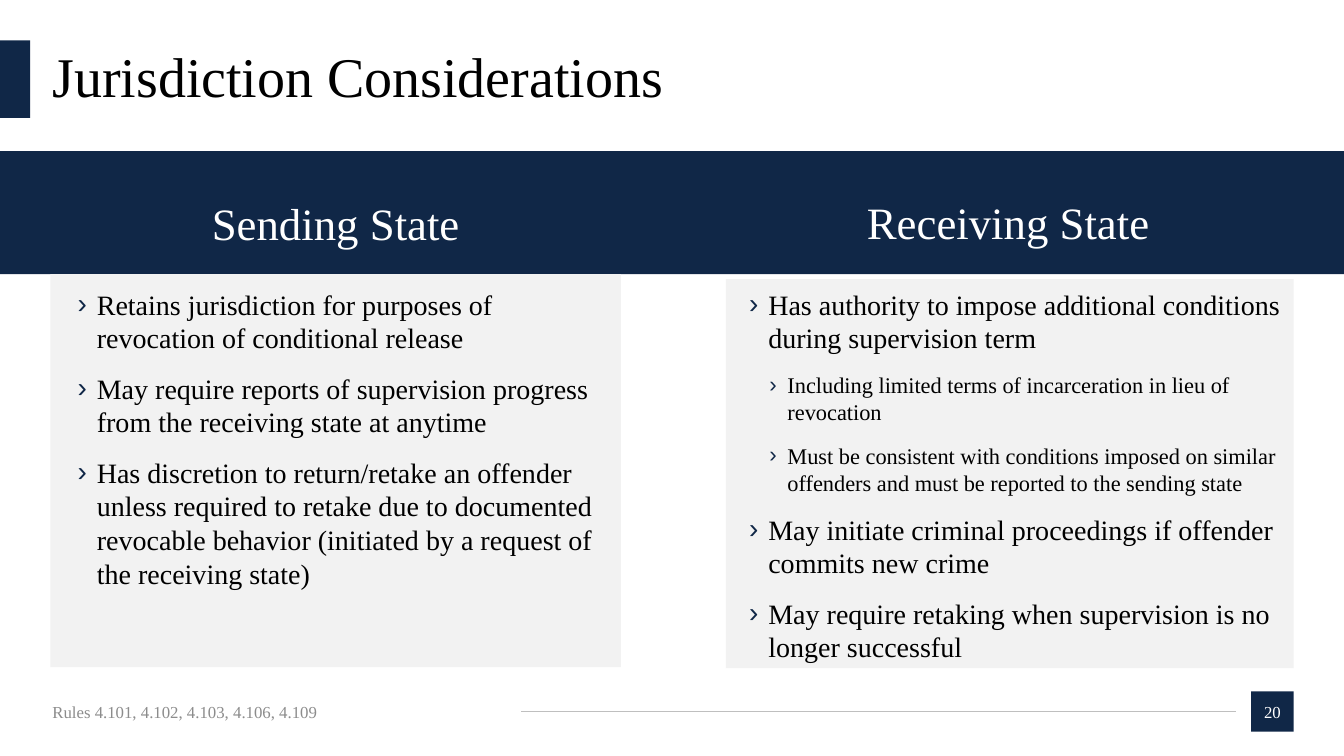
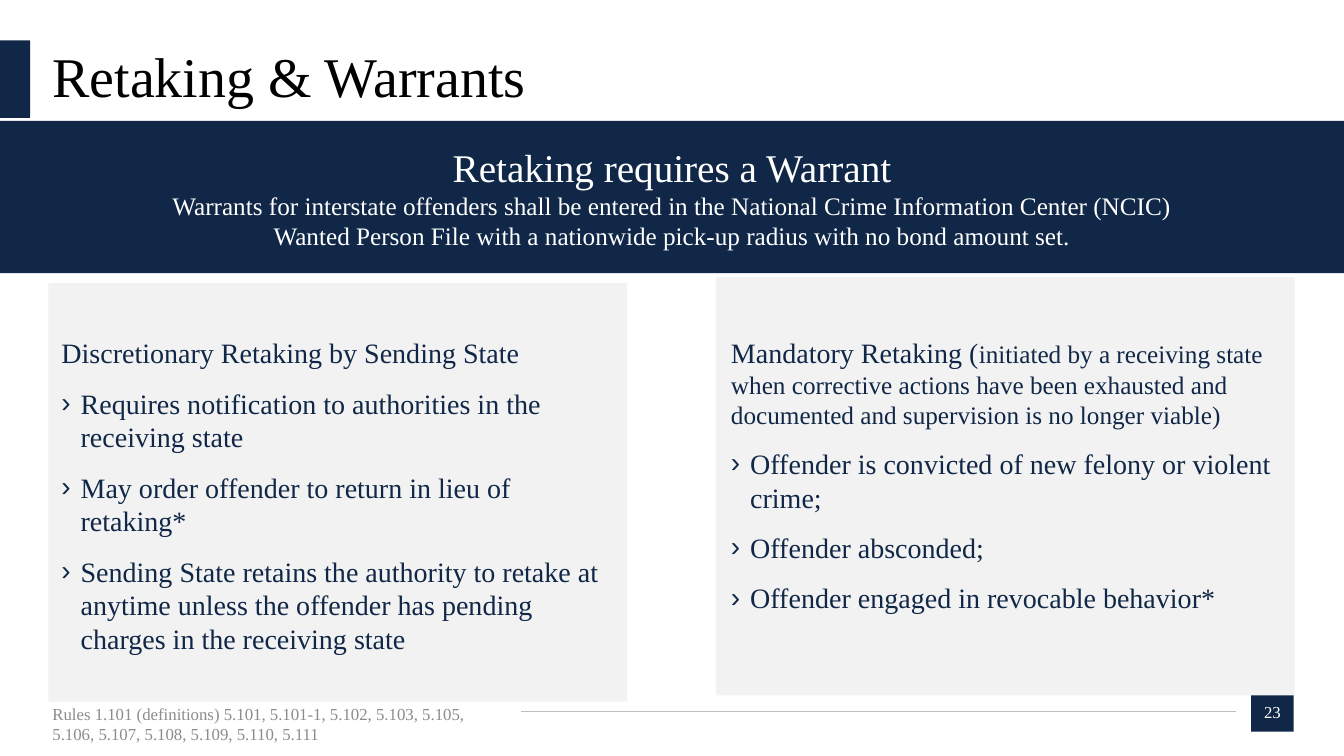
import pptx
import pptx.util
import pptx.dml.color
import pptx.enum.shapes
import pptx.enum.text
import pptx.oxml.ns
from lxml import etree

Inches, Pt = pptx.util.Inches, pptx.util.Pt
ALIGN = pptx.enum.text.PP_ALIGN
ANCHOR = pptx.enum.text.MSO_ANCHOR
qn = pptx.oxml.ns.qn

FONT = "Times New Roman"
NAVY, CARD, BLACK, WHITE = "102747", "F2F2F2", "000000", "FFFFFF"
FOOTER_GREY, RULE_GREY = "8C8C8C", "BFBFBF"
WIDTH, HEIGHT = 13.33, 7.5
MARGIN = 0.52
# Bullet level: (left margin, hanging indent) in inches
BULLETS = {1: (0.19, -0.19), 2: (0.38, -0.18)}


def rgb(color):
    return pptx.dml.color.RGBColor.from_string(color)


def add_rect(s, box, fill):
    sp = s.shapes.add_shape(pptx.enum.shapes.MSO_SHAPE.RECTANGLE, *map(Inches, box))
    sp.shadow.inherit = False
    sp.fill.solid()
    sp.fill.fore_color.rgb = rgb(fill)
    sp.line.fill.background()
    return sp


def format_text(p, size, color, align=ALIGN.LEFT):
    p.alignment = align
    for r in p.runs:
        r.font.name = FONT
        r.font.size = Pt(size)
        r.font.color.rgb = rgb(color)


def add_text(s, box, text, size, color, align=ALIGN.LEFT, anchor=ANCHOR.TOP,
             insets=(0, 0, 0, 0)):
    tf = s.shapes.add_textbox(*map(Inches, box)).text_frame
    tf.word_wrap = True
    tf.vertical_anchor = anchor
    tf.margin_left, tf.margin_top, tf.margin_right, tf.margin_bottom = map(Inches, insets)
    tf.text = text
    for p in tf.paragraphs:
        format_text(p, size, color, align)
    return tf


def add_bullet(p, level):
    p.level = level - 1
    pPr = p._p.get_or_add_pPr()
    left, indent = BULLETS[level]
    pPr.set("marL", str(Inches(left)))
    pPr.set("indent", str(Inches(indent)))
    color = etree.SubElement(pPr, qn("a:buClr"))
    etree.SubElement(color, qn("a:srgbClr"), val=NAVY)
    etree.SubElement(pPr, qn("a:buFont"), typeface="Arial")
    etree.SubElement(pPr, qn("a:buChar"), char="›")


def add_list(s, box, items, color):
    """Items are (level, text); level 0 is a heading without a bullet."""
    tf = add_text(s, box, "\n".join(text for _, text in items), 20, color)
    for p, (level, _) in zip(tf.paragraphs, items):
        p.space_after = Pt(12)
        if level:
            add_bullet(p, level)
        if level == 2:
            format_text(p, 16, color)
    return tf


def add_frame(s, title, number, rules, rules_top):
    """Place the title, side tab, page number, rule line and footer."""
    tf = add_text(s, (MARGIN, 0.4, 12.31, 0.77), title, 40, BLACK, anchor=ANCHOR.MIDDLE)
    tf.paragraphs[0].line_spacing = 0.9
    add_rect(s, (0, 0.4, 0.3, 0.77), NAVY)

    tf = add_rect(s, (12.41, 6.86, 0.42, 0.4), NAVY).text_frame
    tf.margin_left = tf.margin_right = 0
    tf.vertical_anchor = ANCHOR.MIDDLE
    tf.text = str(number)
    format_text(tf.paragraphs[0], 12, WHITE, ALIGN.CENTER)

    line = s.shapes.add_connector(pptx.enum.shapes.MSO_CONNECTOR.STRAIGHT,
                                  *map(Inches, (5.17, 7.06, 12.26, 7.06)))
    line.line.color.rgb = rgb(RULE_GREY)
    line.line.width = Pt(0.5)
    etree.SubElement(line._element.spPr, qn("a:effectLst"))

    add_text(s, (MARGIN, rules_top, 4.5, 0.4), rules, 12, FOOTER_GREY,
             anchor=ANCHOR.MIDDLE, insets=(0, 0.05, 0.1, 0.05))


def add_band(s, top, height):
    return add_rect(s, (0, top, WIDTH, height), NAVY)


def build_jurisdiction(s):
    add_frame(s, "Jurisdiction Considerations", 20,
              "Rules 4.101, 4.102, 4.103, 4.106, 4.109", 6.86)
    add_band(s, 1.5, 1.22)
    columns = [
        ("Sending State", (0.92, 1.94, 4.82, 0.54), (0.5, 2.72, 5.66, 3.9),
         (0.77, 2.85, 5.11, 4.04), [
            (1, "Retains jurisdiction for purposes of revocation of conditional release"),
            (1, "May require reports of supervision progress from the receiving state "
                "at anytime"),
            (1, "Has discretion to return/retake an offender unless required to retake "
                "due to documented revocable behavior (initiated by a request of the "
                "receiving state)")]),
        ("Receiving State", (7.59, 1.93, 4.82, 0.54), (7.2, 2.77, 5.63, 3.86),
         (7.43, 2.85, 5.28, 3.77), [
            (1, "Has authority to impose additional conditions during supervision term"),
            (2, "Including limited terms of incarceration in lieu of revocation"),
            (2, "Must be consistent with conditions imposed on similar offenders and "
                "must be reported to the sending state"),
            (1, "May initiate criminal proceedings if offender commits new crime"),
            (1, "May require retaking when supervision is no longer successful")]),
    ]
    for heading, heading_box, card_box, list_box, items in columns:
        add_rect(s, card_box, CARD)
        add_text(s, heading_box, heading, 32, WHITE, ALIGN.CENTER)
        add_list(s, list_box, items, BLACK)


def build_warrants(s):
    add_rect(s, (0.48, 2.81, 5.74, 4.15), CARD)
    add_frame(s, "Retaking & Warrants", 23,
              "Rules 1.101 (definitions) 5.101, 5.101-1, 5.102, 5.103, 5.105, "
              "5.106, 5.107, 5.108, 5.109, 5.110, 5.111", 6.98)
    tf = add_band(s, 1.2, 1.51).text_frame
    tf.vertical_anchor = ANCHOR.MIDDLE
    tf.text = ("Retaking requires a Warrant\n"
               "Warrants for interstate offenders shall be entered in the "
               "National Crime Information Center (NCIC)\n"
               "Wanted Person File with a nationwide pick-up radius with no bond amount set.")
    for p, size in zip(tf.paragraphs, (28, 18, 18)):
        format_text(p, size, WHITE, ALIGN.CENTER)

    add_rect(s, (7.1, 2.75, 5.74, 4.15), CARD)
    add_list(s, (0.61, 3.33, 5.47, 2.86), [
        (0, "Discretionary Retaking by Sending State"),
        (1, "Requires notification to authorities in the receiving state"),
        (1, "May order offender to return in lieu of retaking*"),
        (1, "Sending State retains the authority to retake at anytime unless the "
            "offender has pending charges in the receiving state")], NAVY)
    tf = add_list(s, (7.25, 3.33, 5.59, 3.3), [
        (0, "Mandatory Retaking ("),
        (1, "Offender is convicted of new felony or violent crime;"),
        (1, "Offender absconded;"),
        (1, "Offender engaged in revocable behavior*")], NAVY)
    heading = tf.paragraphs[0]
    r = heading.add_run()
    r.text = ("initiated by a receiving state when corrective actions have been "
              "exhausted and documented and supervision is no longer viable)")
    format_text(heading, 18, NAVY)
    heading.runs[0].font.size = Pt(20)


def main():
    prs = pptx.Presentation()
    prs.slide_width, prs.slide_height = Inches(WIDTH), Inches(HEIGHT)
    for build in (build_jurisdiction, build_warrants):
        build(prs.slides.add_slide(prs.slide_layouts[6]))
    prs.save("out.pptx")


if __name__ == "__main__":
    main()
